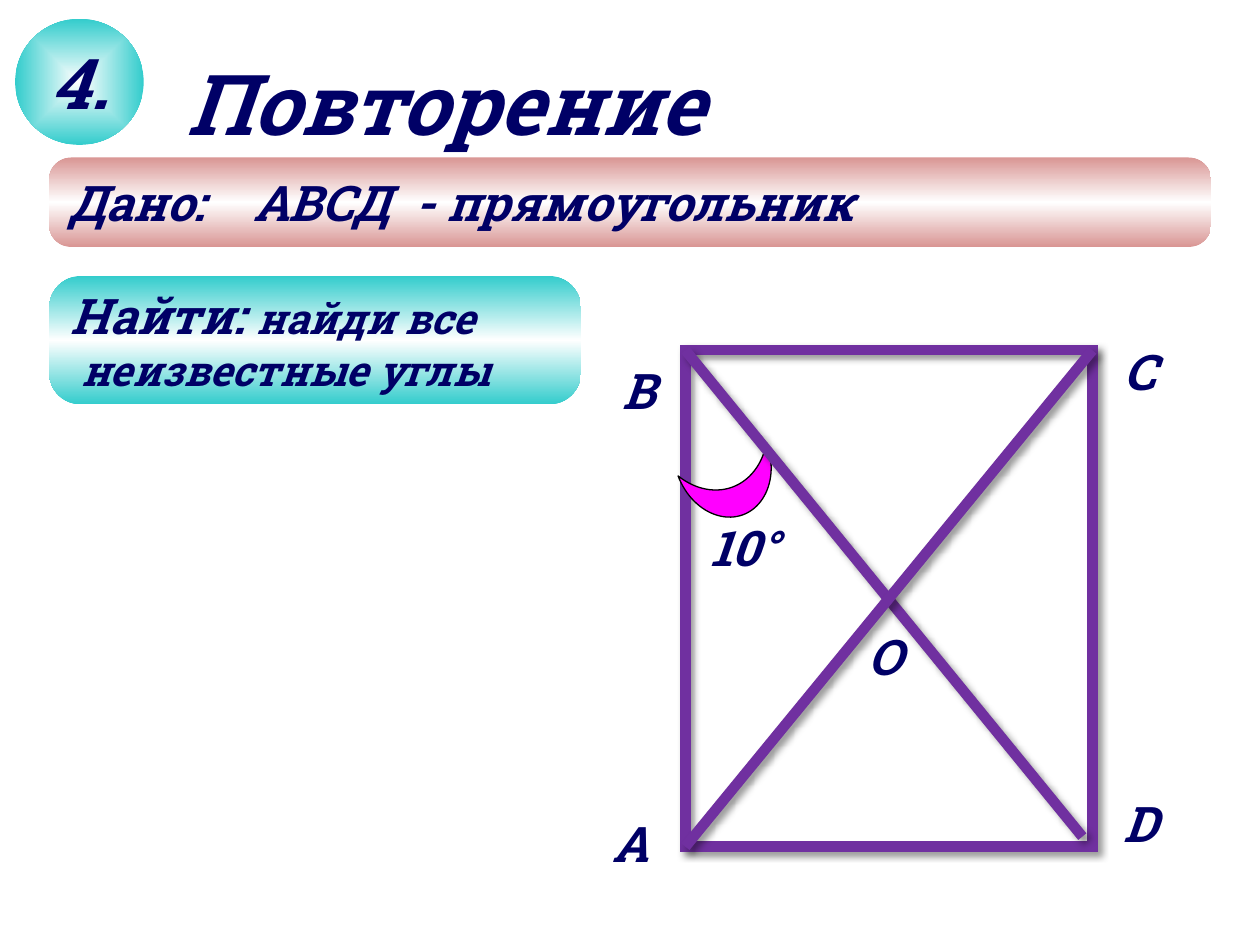
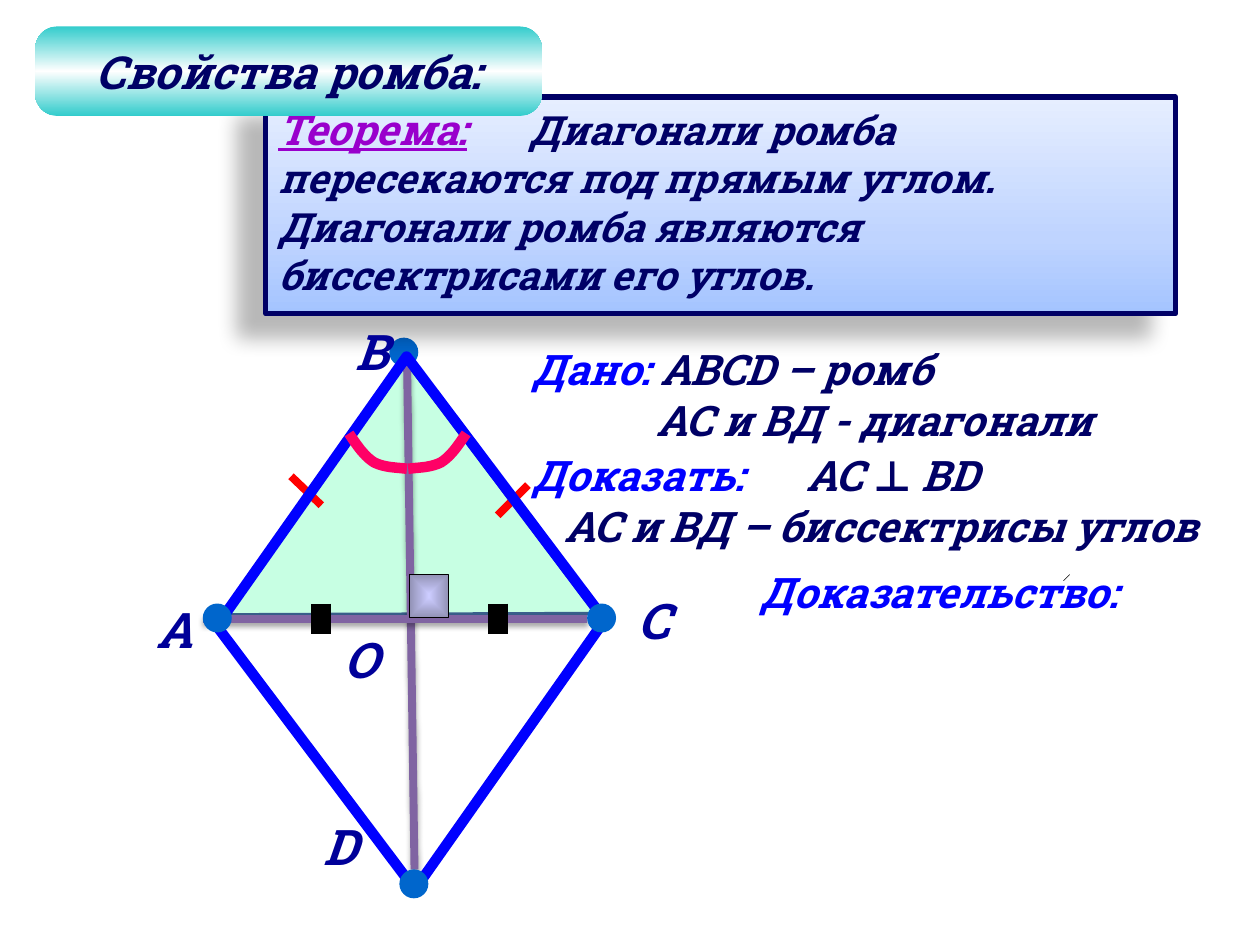
from dataclasses import dataclass
from typing import NamedTuple

from pptx import Presentation
from pptx.dml.color import RGBColor
from pptx.enum.shapes import MSO_CONNECTOR, MSO_SHAPE
from pptx.enum.text import MSO_ANCHOR, MSO_AUTO_SIZE, PP_ALIGN
from pptx.oxml import parse_xml
from pptx.oxml.ns import nsdecls, qn
from pptx.util import Inches, Pt

RECTANGLE, ROUNDED = MSO_SHAPE.RECTANGLE, MSO_SHAPE.ROUNDED_RECTANGLE
ELLIPSE, DIAMOND, MOON = MSO_SHAPE.OVAL, MSO_SHAPE.DIAMOND, MSO_SHAPE.MOON
STRAIGHT = MSO_CONNECTOR.STRAIGHT
TOP, MIDDLE = MSO_ANCHOR.TOP, MSO_ANCHOR.MIDDLE
LEFT, CENTER = PP_ALIGN.LEFT, PP_ALIGN.CENTER
NO_AUTOSIZE = MSO_AUTO_SIZE.NONE
TITLE_ONLY = 5


@dataclass(frozen=True)
class Theme:
    font: str = "Roboto Slab"
    ink: str = "000066"
    label: str = "000099"
    keyword: str = "0000FF"
    theorem: str = "9900CC"
    teal: str = "33CCCC"
    rose: str = "D99694"
    white: str = "FFFFFF"
    black: str = "000000"
    purple: str = "7030A0"
    diagonal: str = "8064A2"
    magenta: str = "FF00FF"
    vertex: str = "0066CC"
    mint: str = "99FFCC"
    steel: str = "3A5F8C"
    red: str = "FF0000"
    arc: str = "FF0066"
    title_outline: str = "5E457C"
    theorem_fill: tuple = ("A4C4FF", "BFD4FF", "E6EEFF")
    angle_fill: tuple = ("CCCCFF", "9292B6")
    title_size: float = 48
    number_size: float = 40
    large: float = 28
    heading: float = 26
    body: float = 24
    theorem_size: float = 23


THEME = Theme()


class Box(NamedTuple):
    left: float
    top: float
    width: float
    height: float


class Stroke(NamedTuple):
    color: str
    width: float


class Shadow(NamedTuple):
    opacity: float
    blur: float
    distance: float
    angle: float


class Gradient(NamedTuple):
    """Stops of (percent, colour); no angle means from the centre outwards."""
    stops: tuple
    angle: float | None = None


class Segment(NamedTuple):
    start: tuple
    end: tuple
    stroke: Stroke
    shadow: Shadow | None = None


class Label(NamedTuple):
    text: str
    left: float
    top: float


class Run(NamedTuple):
    text: str
    color: str = THEME.ink
    size: float = THEME.body
    underline: bool = False
    spacing: float = 0


class Line(NamedTuple):
    runs: tuple
    indent: float = 0


def gap(spacing: float) -> Run:
    """One space widened by some points."""
    return Run(" ", spacing=spacing)


def set_gradient(shape, gradient: Gradient) -> None:
    stops = "".join(
        f'<a:gs pos="{position * 1000}"><a:srgbClr val="{color}"/></a:gs>'
        for position, color in gradient.stops)
    if gradient.angle is None:
        direction = ('<a:path path="shape"><a:fillToRect l="50000" t="50000" '
                     'r="50000" b="50000"/></a:path>')
    else:
        direction = f'<a:lin ang="{gradient.angle * 60000}" scaled="0"/>'
    shape.fill.solid()
    properties = shape.element.spPr
    properties.replace(properties.find(qn("a:solidFill")), parse_xml(
        f'<a:gradFill {nsdecls("a")} rotWithShape="1"><a:gsLst>{stops}</a:gsLst>'
        f'{direction}</a:gradFill>'))


def set_shadow(shape, shadow: Shadow | None) -> None:
    """Replace any inherited shadow; call once the outline is set."""
    properties = shape.element.spPr
    for old in properties.findall(qn("a:effectLst")):
        properties.remove(old)
    effects = parse_xml(f'<a:effectLst {nsdecls("a")}/>')
    if shadow:
        effects.append(parse_xml(
            f'<a:outerShdw {nsdecls("a")} blurRad="{Pt(shadow.blur)}" '
            f'dist="{Pt(shadow.distance)}" dir="{shadow.angle * 60000}" '
            f'algn="tl" rotWithShape="0"><a:srgbClr val="{THEME.black}">'
            f'<a:alpha val="{shadow.opacity * 1000}"/></a:srgbClr></a:outerShdw>'))
    properties.append(effects)


def set_stroke(shape, stroke: Stroke) -> None:
    shape.line.color.rgb = RGBColor.from_string(stroke.color)
    shape.line.width = Pt(stroke.width)


def style(shape, fill=None, stroke: Stroke | None = None, shadow: Shadow | None = None):
    if isinstance(fill, Gradient):
        set_gradient(shape, fill)
    elif fill:
        shape.fill.solid()
        shape.fill.fore_color.rgb = RGBColor.from_string(fill)
    else:
        shape.fill.background()
    if stroke:
        set_stroke(shape, stroke)
    else:
        shape.line.fill.background()
    set_shadow(shape, shadow)
    return shape


def add_figure(slide, kind, box: Box, fill=None, stroke=None, shadow=None,
               rotation: float = 0, adjustment: float | None = None):
    shape = slide.shapes.add_shape(kind, *map(Inches, box))
    shape.rotation = rotation
    if adjustment is not None:
        shape.adjustments[0] = adjustment
    return style(shape, fill, stroke, shadow)


def add_segment(slide, segment: Segment) -> None:
    connector = slide.shapes.add_connector(
        STRAIGHT, *map(Inches, segment.start + segment.end))
    set_stroke(connector, segment.stroke)
    set_shadow(connector, segment.shadow)


def add_outline(slide, points, closed: bool, fill=None, stroke=None):
    corners = [(Inches(x), Inches(y)) for x, y in points]
    builder = slide.shapes.build_freeform(*corners[0])
    builder.add_line_segments(corners[1:], close=closed)
    return style(builder.convert_to_shape(), fill, stroke)


def curve_points(*corners: tuple, steps: int = 10) -> list:
    """Points along a cubic curve, without its start."""
    points = []
    for step in range(1, steps + 1):
        t = step / steps
        weights = ((1 - t) ** 3, 3 * t * (1 - t) ** 2, 3 * t * t * (1 - t), t ** 3)
        points.append(tuple(sum(w * corner[axis] for w, corner in zip(weights, corners))
                            for axis in (0, 1)))
    return points


def add_run(paragraph, text: str, *, color: str, size: float, underline: bool,
            spacing: float) -> None:
    run = paragraph.add_run()
    run.text = text
    run.font.name, run.font.size = THEME.font, Pt(size)
    run.font.bold = run.font.italic = True
    run.font.color.rgb = RGBColor.from_string(color)
    if underline:
        run.font.underline = True
    if spacing:
        run._r.get_or_add_rPr().set("spc", str(round(spacing * 100)))


def write(shape, *lines: Line, anchor=TOP, align=LEFT, wrap: bool = True) -> None:
    frame = shape.text_frame
    frame.word_wrap, frame.auto_size = wrap, NO_AUTOSIZE
    frame.vertical_anchor = anchor
    for index, line in enumerate(lines):
        paragraph = frame.add_paragraph() if index else frame.paragraphs[0]
        properties = paragraph._p.get_or_add_pPr()
        properties.set("marL", str(Inches(line.indent)))
        properties.set("indent", "0")
        paragraph.alignment = align
        for run in line.runs:
            add_run(paragraph, **run._asdict())


def write_title(slide, box: Box, text: str, size: float, **layout):
    title = slide.shapes.title
    title.left, title.top, title.width, title.height = map(Inches, box)
    write(title, Line((Run(text, size=size),)), **layout)
    return title


def add_text(slide, box: Box, *lines: Line) -> None:
    write(slide.shapes.add_textbox(*map(Inches, box)), *lines)


def add_labels(slide, labels, color: str) -> None:
    for label in labels:
        add_text(slide, Box(label.left, label.top, 0.5, 0.57),
                 Line((Run(label.text, color, THEME.large),)))


def add_band(slide, box: Box, color: str, *lines: Line) -> None:
    gradient = Gradient(((0, color), (50, THEME.white), (100, color)), 90)
    band = add_figure(slide, ROUNDED, box, gradient, adjustment=0.25)
    write(band, *lines, anchor=MIDDLE)


def build_rectangle_slide(slide) -> None:
    title = write_title(slide, Box(1.38, 0.36, 4.72, 0.91), "Повторение", THEME.title_size)
    title_run = title.text_frame.paragraphs[0].runs[0]
    title_run._r.get_or_add_rPr().insert(0, parse_xml(
        f'<a:ln {nsdecls("a")} w="{Pt(0.71)}"><a:solidFill>'
        f'<a:srgbClr val="{THEME.title_outline}"/></a:solidFill></a:ln>'))

    side, shadow = Stroke(THEME.purple, 6), Shadow(40, 4, 3, 45)
    rectangle = add_figure(slide, RECTANGLE, Box(5.44, 2.78, 3.23, 3.94),
                           stroke=side, shadow=shadow)
    rectangle.element.spPr.find(qn("a:ln")).append(
        parse_xml(f'<a:miter {nsdecls("a")} lim="800000"/>'))
    add_figure(slide, MOON, Box(5.58, 3.49, 0.47, 0.75), THEME.magenta,
               Stroke(THEME.black, 0.75), rotation=249.4, adjustment=0.5)
    add_segment(slide, Segment((5.44, 2.78), (8.59, 6.64), side, shadow))
    add_segment(slide, Segment((5.44, 6.72), (8.67, 2.78), side, shadow))
    add_text(slide, Box(5.54, 4.06, 1.03, 0.57), Line((Run("10°", size=THEME.large),)))
    add_labels(slide, (Label("D", 8.82, 6.25), Label("С", 8.82, 2.66),
                       Label("В", 4.84, 2.81), Label("А", 4.76, 6.41),
                       Label("О", 6.79, 4.92)), THEME.ink)

    add_band(slide, Box(0.39, 1.25, 9.22, 0.71), THEME.rose,
             Line((Run("Дано:", size=THEME.large), gap(22),
                   Run("АВСД", size=THEME.large), gap(8),
                   Run("- прямоугольник", size=THEME.large))))
    add_band(slide, Box(0.39, 2.19, 4.22, 1.02), THEME.teal,
             Line((Run("Найти: ", size=THEME.large), Run("найди все"))),
             Line((Run("неизвестные углы"),), indent=0.08))
    number = add_figure(slide, ELLIPSE, Box(0.12, 0.15, 1.02, 1),
                        Gradient(((0, THEME.white), (100, THEME.teal))))
    write(number, Line((Run("4.", size=THEME.number_size),)),
          anchor=MIDDLE, align=CENTER, wrap=False)


def add_vertices(slide, *corners) -> None:
    for left, top in corners:
        add_figure(slide, ELLIPSE, Box(left, top, 0.23, 0.23), THEME.vertex)


def add_rhombus(slide) -> None:
    shadow = Shadow(35, 3.1, 1.8, 90)
    diagonal, tick = Stroke(THEME.diagonal, 4.5), Stroke(THEME.red, 4.5)
    add_segment(slide, Segment((3.23, 2.83), (3.29, 6.9), diagonal, shadow))
    add_segment(slide, Segment((1.61, 4.91), (4.66, 4.91), diagonal, shadow))
    add_segment(slide, Segment((2.31, 3.78), (2.55, 4.01), tick))
    add_segment(slide, Segment((3.95, 4.09), (4.19, 3.85), tick))
    inner, outer = THEME.angle_fill
    add_figure(slide, RECTANGLE, Box(3.25, 4.56, 0.31, 0.34),
               Gradient(((0, inner), (100, outer))), Stroke(THEME.black, 0.75))
    add_labels(slide, (Label("О", 2.63, 4.95), Label("А", 1.14, 4.71),
                       Label("В", 2.72, 2.5), Label("С", 4.96, 4.64),
                       Label("D", 2.47, 6.43)), THEME.label)
    add_figure(slide, DIAMOND, Box(1.72, 2.83, 3.08, 4.23),
               stroke=Stroke(THEME.keyword, 6), rotation=359.1)

    start, middle, end = (3.7, 3.44), (3.5, 3.67), (3.24, 3.72)
    right_arc = [start,
                 *curve_points(start, (3.64, 3.53), (3.58, 3.62), middle),
                 *curve_points(middle, (3.42, 3.71), (3.33, 3.71), end)]
    left_arc = [(6.47 - x, y) for x, y in right_arc]
    for arc in (right_arc, left_arc):
        add_outline(slide, arc, closed=False, stroke=Stroke(THEME.arc, 6))
    add_vertices(slide, (4.66, 4.79), (1.61, 4.79), (3.17, 6.9))
    for x in (2.55, 3.95):
        add_segment(slide, Segment((x, 4.79), (x, 5.03), Stroke(THEME.black, 11.5)))


def build_rhombus_slide(slide) -> None:
    triangle = add_outline(slide, ((1.81, 4.88), (3.2, 2.84), (4.73, 4.87)), closed=True,
                           fill=THEME.mint, stroke=Stroke(THEME.steel, 2))
    fill_color = triangle.element.spPr.find(qn("a:solidFill"))[0]
    fill_color.append(parse_xml(f'<a:alpha {nsdecls("a")} val="55000"/>'))
    add_vertices(slide, (3.09, 2.68))
    add_segment(slide, Segment((8.44, 4.61), (8.49, 4.56), Stroke(THEME.black, 0.25)))

    theorem = add_figure(
        slide, RECTANGLE, Box(2.11, 0.77, 7.22, 1.72),
        Gradient(tuple(zip((0, 35, 100), THEME.theorem_fill)), 270),
        Stroke(THEME.ink, 3), Shadow(28, 11.8, 19.7, 141))
    write(theorem, Line((
        Run("Теорема:", THEME.theorem, underline=True), gap(30),
        Run("Диагонали ромба пересекаются под прямым углом. "
            "Диагонали ромба являются биссектрисами его углов.",
            size=THEME.theorem_size))))

    add_text(slide, Box(4.13, 2.68, 5.94, 0.91),
             Line((Run("Дано: ", THEME.keyword), Run("АВСD – ромб"))),
             Line((Run("АС и ВД - диагонали"),), indent=0.98))
    add_text(slide, Box(4.13, 3.52, 5.94, 0.91),
             Line((Run("Доказать:", THEME.keyword), gap(30), Run("АС ⊥ ВD"))),
             Line((Run("АС и ВД – биссектрисы углов"),), indent=0.25))
    add_text(slide, Box(5.94, 4.45, 3.61, 0.5),
             Line((Run("Доказательство:", THEME.keyword),)))
    add_rhombus(slide)

    heading = Box(0.28, 0.21, 4.02, 0.71)
    add_band(slide, heading, THEME.teal)
    title = write_title(slide, heading, "Свойства ромба:", THEME.heading,
                        anchor=MIDDLE, align=CENTER)
    title.element.getparent().append(title.element)  # bring to front


def main() -> None:
    presentation = Presentation()
    presentation.slide_width, presentation.slide_height = Inches(10), Inches(7.5)
    layout = presentation.slide_layouts[TITLE_ONLY]
    for build in (build_rectangle_slide, build_rhombus_slide):
        build(presentation.slides.add_slide(layout))
    presentation.save("out.pptx")


if __name__ == "__main__":
    main()
